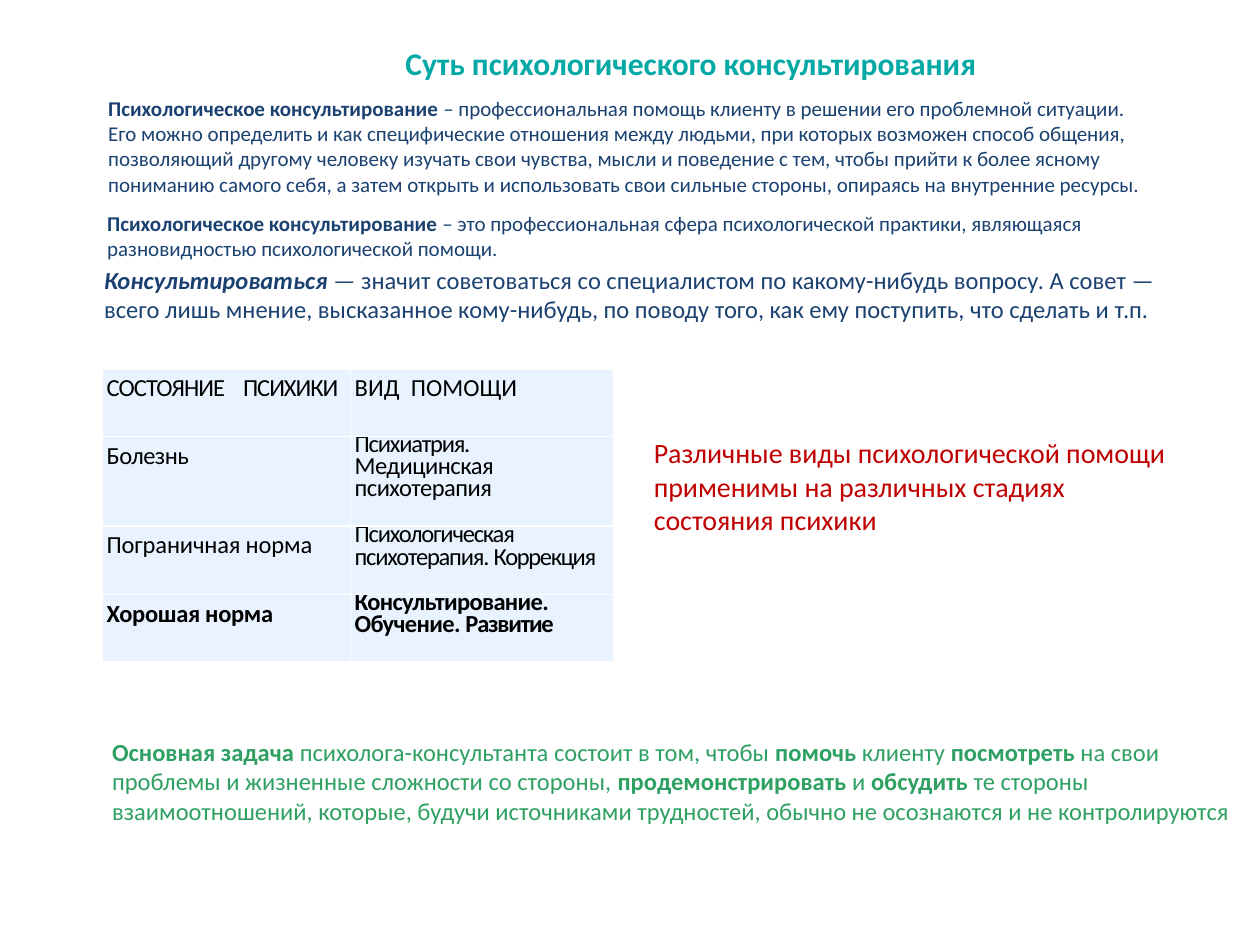
from dataclasses import dataclass

from lxml import etree
from pptx import Presentation
from pptx import util as u
from pptx.dml.color import RGBColor
from pptx.enum import text
from pptx.oxml.ns import qn

FONT = "Calibri"
NAVY, GREEN, RED, TEAL = "1B4171", "2EA061", "C00000", "04A8A4"
BLACK, WHITE, PALE_BLUE = "000000", "FFFFFF", "E8F3FF"


@dataclass(frozen=True)
class Phrase:
    """A stretch of text; spacing is the letter spacing in points."""
    words: str
    bold: bool = False
    italic: bool = False
    spacing: float = 0


@dataclass(frozen=True)
class Passage:
    """A text block; box is left, top, width, height in centimetres."""
    box: tuple[float, float, float, float]
    size: int
    color: str
    phrases: tuple[Phrase, ...]


@dataclass(frozen=True)
class Entry:
    """A table cell; leading is a multiple (float) or an exact u.Pt."""
    phrases: tuple[Phrase, ...]
    leading: float | u.Length = 1.15


TITLE = Passage((7.92, 0.76, 12.55, 1.02), 18, TEAL,
                (Phrase("Суть психологического консультирования", bold=True),))

PASSAGES = (
    Passage((2.01, 14.73, 23.22, 2.06), 14, GREEN, (
        Phrase("Основная задача ", bold=True),
        Phrase("психолога-консультанта состоит в том, чтобы "),
        Phrase("помочь", bold=True),
        Phrase(" клиенту "),
        Phrase("посмотреть", bold=True),
        Phrase(" на свои проблемы и жизненные сложности со стороны, "),
        Phrase("продемонстрировать", bold=True),
        Phrase(" и "),
        Phrase("обсудить", bold=True),
        Phrase(" те стороны взаимоотношений, которые, будучи источниками "
               "трудностей, обычно не осознаются и не контролируются"),
    )),
    Passage((1.85, 5.21, 22.17, 1.45), 14, NAVY, (
        Phrase("Консультироваться ", bold=True, italic=True),
        Phrase("— ", italic=True),
        Phrase("значит советоваться со специалистом по какому-нибудь вопросу. "
               "А совет — всего лишь мнение, высказанное кому-нибудь, по поводу "
               "того, как ему поступить, что сделать и т.п."),
    )),
    Passage((12.93, 8.66, 11.28, 2.31), 16, RED, (
        Phrase("Различные виды психологической помощи применимы на различных "
               "стадиях состояния психики"),
    )),
    Passage((1.93, 1.8, 21.39, 2.31), 12, NAVY, (
        Phrase("Психологическое консультирование ", bold=True),
        Phrase("– профессиональная помощь клиенту в решении его проблемной "
               "ситуации. Его можно определить и как специфические отношения "
               "между людьми, при которых возможен способ общения, позволяющий "
               "другому человеку изучать свои чувства, мысли и поведение с тем, "
               "чтобы прийти к более ясному пониманию самого себя, а затем "
               "открыть и использовать свои сильные стороны, опираясь на "
               "внутренние ресурсы."),
    )),
    Passage((1.91, 4.11, 21.18, 1.27), 12, NAVY, (
        Phrase("Психологическое консультирование ", bold=True),
        Phrase("– это профессиональная сфера психологической практики, "
               "являющаяся разновидностью психологической помощи."),
    )),
)

# Table: state of mind and the matching kind of help
TABLE_LEFT, TABLE_TOP = 2.07, 7.44
COLUMN_WIDTHS = (5.0, 5.31)
ROW_HEIGHTS = (1.36, 1.8, 1.39, 1.36)
HELP_TABLE = (
    (Entry((Phrase("СОСТОЯНИЕ", spacing=-0.6), Phrase(" ", spacing=7.1),
            Phrase("ПСИХИКИ", spacing=-0.6))),
     Entry((Phrase("ВИД"), Phrase(" ", spacing=3.2), Phrase("ПОМОЩИ")))),
    (Entry((Phrase("Болезнь", spacing=-0.3),)),
     Entry((Phrase("Психиатрия. ", spacing=-0.7),
            Phrase("Медицинская психотерапия", spacing=-0.3)), u.Pt(12.7))),
    (Entry((Phrase("Пограничная норма", spacing=-0.1),)),
     Entry((Phrase("Психологическая психотерапия. ", spacing=-0.7),
            Phrase("Коррекция", spacing=-0.8)), u.Pt(13.2))),
    (Entry((Phrase("Хорошая норма", bold=True, spacing=-0.2),)),
     Entry((Phrase("Консультирование. Обучение. ", bold=True, spacing=-0.4),
            Phrase("Развитие", bold=True, spacing=-0.7)), u.Pt(12.7))),
)


def rgb(color: str) -> RGBColor:
    return RGBColor.from_string(color)


def write(paragraph, phrases: tuple[Phrase, ...], size: int, color: str) -> None:
    for phrase in phrases:
        run = paragraph.add_run()
        run.text = phrase.words
        font = run.font
        font.name, font.size = FONT, u.Pt(size)
        font.bold, font.italic = phrase.bold, phrase.italic
        font.color.rgb = rgb(color)
        if phrase.spacing:
            run._r.get_or_add_rPr().set("spc", str(round(phrase.spacing * 100)))


def fill_passage(shape, passage: Passage) -> None:
    shape.left, shape.top, shape.width, shape.height = map(u.Cm, passage.box)
    frame = shape.text_frame
    frame.word_wrap = True
    frame.auto_size = text.MSO_AUTO_SIZE.SHAPE_TO_FIT_TEXT
    frame.vertical_anchor = text.MSO_ANCHOR.TOP
    frame.paragraphs[0].alignment = text.PP_ALIGN.LEFT
    write(frame.paragraphs[0], passage.phrases, passage.size, passage.color)


def add_borders(cell, color: str) -> None:
    properties = cell._tc.get_or_add_tcPr()
    for position, side in enumerate(("lnL", "lnR", "lnT", "lnB")):
        line = etree.Element(qn(f"a:{side}"), w=str(u.Pt(1)))
        solid = etree.SubElement(line, qn("a:solidFill"))
        etree.SubElement(solid, qn("a:srgbClr"), val=color)
        properties.insert(position, line)


def fill_cell(cell, entry: Entry) -> None:
    cell.margin_left = cell.margin_right = u.Cm(0.08)
    cell.margin_top = cell.margin_bottom = 0
    cell.fill.solid()
    cell.fill.fore_color.rgb = rgb(PALE_BLUE)
    add_borders(cell, WHITE)
    paragraph = cell.text_frame.paragraphs[0]
    paragraph.alignment = text.PP_ALIGN.JUSTIFY
    paragraph.line_spacing = entry.leading
    write(paragraph, entry.phrases, 14, BLACK)


def add_help_table(slide) -> None:
    table = slide.shapes.add_table(
        len(ROW_HEIGHTS), len(COLUMN_WIDTHS), u.Cm(TABLE_LEFT), u.Cm(TABLE_TOP),
        u.Cm(sum(COLUMN_WIDTHS)), u.Cm(sum(ROW_HEIGHTS))).table
    table.first_row = table.horz_banding = False
    for column, width in zip(table.columns, COLUMN_WIDTHS):
        column.width = u.Cm(width)
    for row, height, entries in zip(table.rows, ROW_HEIGHTS, HELP_TABLE):
        row.height = u.Cm(height)
        for cell, entry in zip(row.cells, entries):
            fill_cell(cell, entry)


def main() -> None:
    deck = Presentation()
    deck.slide_width, deck.slide_height = u.Cm(25.4), u.Cm(19.05)
    slide = deck.slides.add_slide(deck.slide_layouts[5])

    # Heading and running text
    fill_passage(slide.shapes.title, TITLE)
    for passage in PASSAGES:
        fill_passage(slide.shapes.add_textbox(0, 0, 0, 0), passage)

    add_help_table(slide)
    deck.save("out.pptx")


if __name__ == "__main__":
    main()
